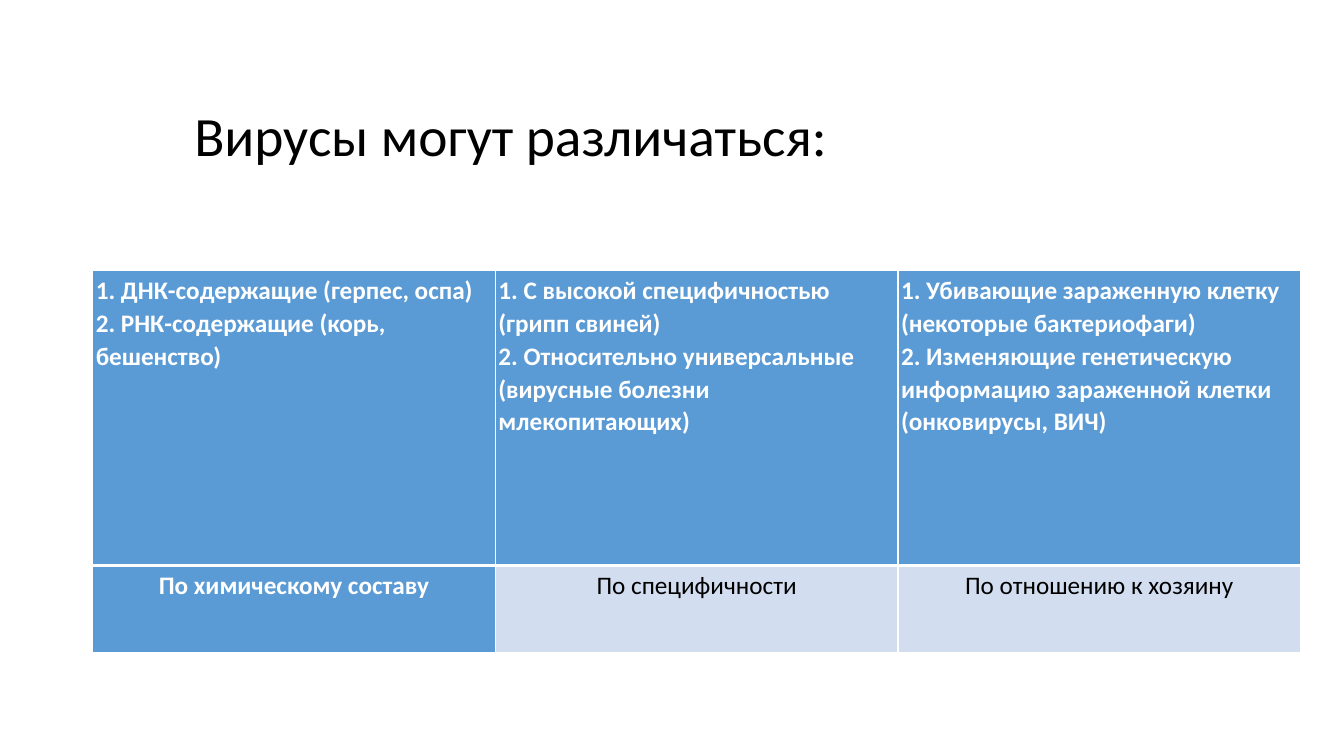
from lxml import etree
from pptx import Presentation
from pptx.dml.color import RGBColor
from pptx.enum.text import MSO_ANCHOR, PP_ALIGN
from pptx.oxml.ns import qn
from pptx.util import Inches, Pt

LEFT, CENTER = PP_ALIGN.LEFT, PP_ALIGN.CENTER
MIDDLE = MSO_ANCHOR.MIDDLE
FONT = "Calibri"
BLACK = RGBColor(0x00, 0x00, 0x00)
WHITE = RGBColor(0xFF, 0xFF, 0xFF)
BLUE = RGBColor(0x5B, 0x9B, 0xD5)
PALE_BLUE = RGBColor(0xD2, 0xDE, 0xEF)

TITLE = "Вирусы могут различаться:"
# Each column: kinds of viruses, then the feature that separates them.
# "\v" is a line break inside a paragraph.
COLUMNS = [
    ("1. ДНК-содержащие (герпес, оспа)\v2. РНК-содержащие (корь, бешенство)",
     "По химическому составу"),
    ("1. С высокой специфичностью (грипп свиней)\v"
     "2. Относительно универсальные (вирусные болезни млекопитающих)",
     "По специфичности"),
    ("1. Убивающие зараженную клетку (некоторые бактериофаги)\v"
     "2. Изменяющие генетическую информацию зараженной клетки (онковирусы, ВИЧ)",
     "По отношению к хозяину"),
]
ROW_HEIGHTS = (2.93, 0.86)
CELL_INSET = Inches(0.03)


def write(frame, text, size, color, bold, align, spacing):
    paragraph = frame.paragraphs[0]
    paragraph.text = text
    paragraph.alignment = align
    paragraph.line_spacing = spacing
    for run in paragraph.runs:
        run.font.name = FONT
        run.font.size = Pt(size)
        run.font.bold = bold
        run.font.color.rgb = color


def add_title(slide, left, top, width, height):
    title = slide.shapes.add_textbox(
        Inches(left), Inches(top), Inches(width), Inches(height))
    frame = title.text_frame
    frame.word_wrap = True
    frame.vertical_anchor = MIDDLE
    write(frame, TITLE, 39.6, BLACK, False, LEFT, 0.9)


def set_borders(cell, top, bottom):
    """White borders: 1 pt at the sides, given widths above and below."""
    properties = cell._tc.get_or_add_tcPr()
    for side, width in (("L", 1), ("R", 1), ("T", top), ("B", bottom)):
        line = etree.SubElement(properties, qn("a:ln" + side), w=str(Pt(width)))
        fill = etree.SubElement(line, qn("a:solidFill"))
        etree.SubElement(fill, qn("a:srgbClr"), val=str(WHITE))


def add_virus_table(slide, left, top, width):
    table = slide.shapes.add_table(
        len(ROW_HEIGHTS), len(COLUMNS), Inches(left), Inches(top),
        Inches(width), Inches(sum(ROW_HEIGHTS))).table
    for row, height in zip(table.rows, ROW_HEIGHTS):
        row.height = Inches(height)
    for c, texts in enumerate(COLUMNS):
        table.columns[c].width = Inches(width / len(COLUMNS))
        for r, text in enumerate(texts):
            cell = table.cell(r, c)
            is_header = r == 0 or c == 0
            cell.margin_left = cell.margin_right = CELL_INSET
            cell.margin_top = cell.margin_bottom = CELL_INSET
            set_borders(cell, 1 if r == 0 else 3, 3 if r == 0 else 1)
            cell.fill.solid()
            cell.fill.fore_color.rgb = BLUE if is_header else PALE_BLUE
            write(cell.text_frame, text, 18, WHITE if is_header else BLACK,
                  is_header, LEFT if r == 0 else CENTER, 1.07)


def main():
    presentation = Presentation()
    presentation.slide_width = Inches(13.33)
    presentation.slide_height = Inches(7.5)
    slide = presentation.slides.add_slide(presentation.slide_layouts[6])
    add_title(slide, 1.83, 0.93, 11.5, 0.89)
    add_virus_table(slide, 0.92, 2.68, 11.98)
    presentation.save("out.pptx")


if __name__ == "__main__":
    main()
